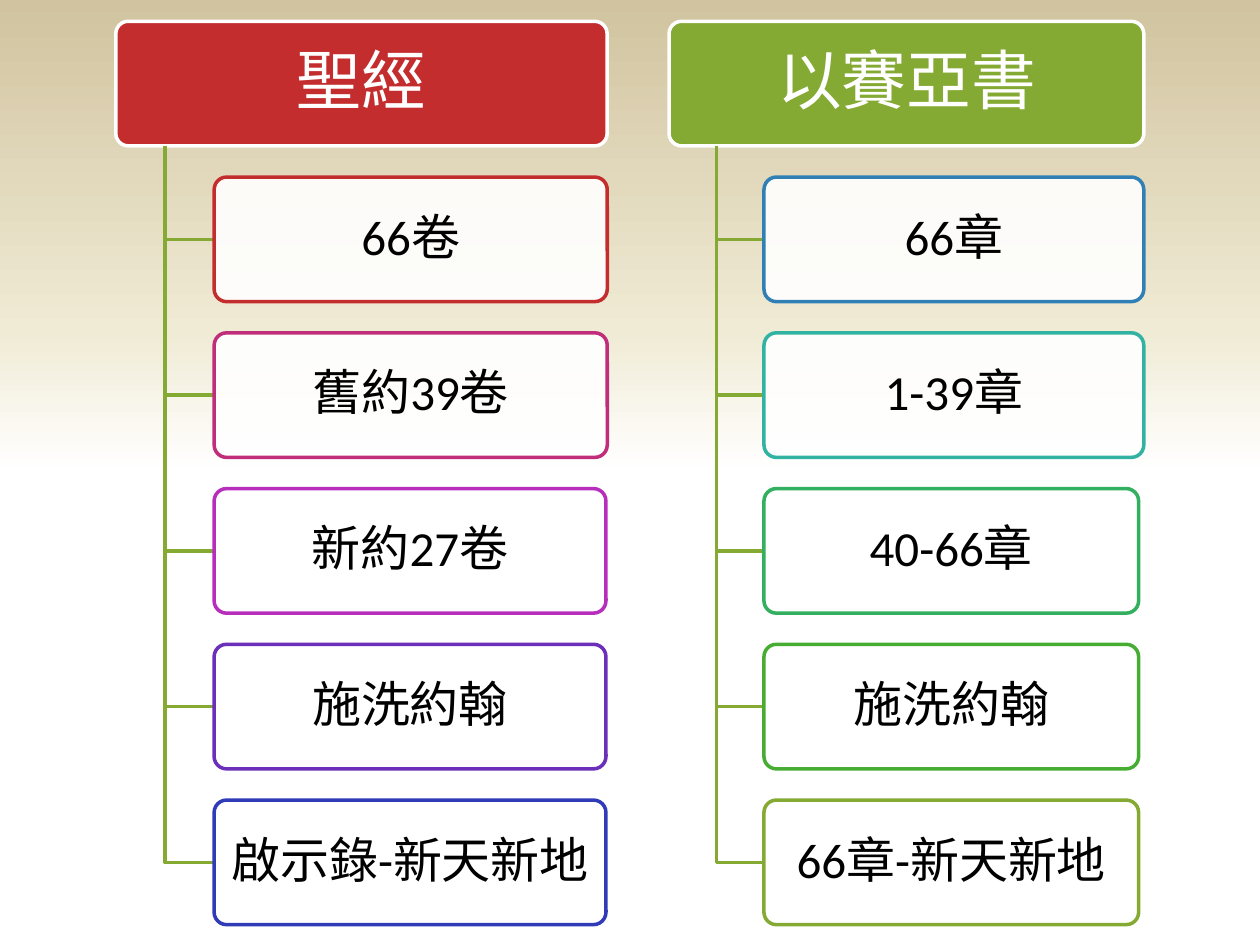
from lxml.etree import SubElement
from pptx import Presentation
from pptx.dml.color import RGBColor
from pptx.enum.shapes import MSO_SHAPE as Shape
from pptx.enum.text import MSO_ANCHOR as Anchor, PP_ALIGN as Align
from pptx.oxml.ns import qn
from pptx.util import Pt

WHITE = RGBColor(0xFF, 0xFF, 0xFF)
BLACK = RGBColor(0x00, 0x00, 0x00)
CREAM = RGBColor(0xF0, 0xEB, 0xD5)
TAN = RGBColor(0xD1, 0xC3, 0x9F)
RED = RGBColor(0xC3, 0x2D, 0x2E)
MAGENTA = RGBColor(0xC0, 0x2E, 0x7B)
PURPLE = RGBColor(0xB7, 0x2E, 0xBD)
VIOLET = RGBColor(0x6C, 0x2F, 0xBA)
INDIGO = RGBColor(0x30, 0x3B, 0xB8)
BLUE = RGBColor(0x31, 0x80, 0xB5)
TEAL = RGBColor(0x31, 0xB2, 0xA2)
EMERALD = RGBColor(0x32, 0xAF, 0x5F)
GREEN = RGBColor(0x46, 0xAD, 0x32)
OLIVE = RGBColor(0x84, 0xAA, 0x33)

TOP, ROW_PITCH, BOX_HEIGHT = 12.2, 89, 71.2
LINE_WIDTH = 2

# heading, colour, left, width, narrowing of the last three boxes, items
COLUMNS = [
    ("聖經", RED, 66.2, 280.8, 0.7, [
        ("66卷", RED), ("舊約39卷", MAGENTA), ("新約27卷", PURPLE),
        ("施洗約翰", VIOLET), ("啟示錄-新天新地", INDIGO)]),
    ("以賽亞書", OLIVE, 382.3, 271.3, 2.9, [
        ("66章", BLUE), ("1-39章", TEAL), ("40-66章", EMERALD),
        ("施洗約翰", GREEN), ("66章-新天新地", OLIVE)]),
]


def add_box(text, left, top, width, *, fill, line, color, size, inset, opacity=100):
    """Add a rounded box with centred text; inset is (horizontal, vertical)."""
    box = slide.shapes.add_shape(
        Shape.ROUNDED_RECTANGLE, Pt(left), Pt(top), Pt(width), Pt(BOX_HEIGHT))
    box.adjustments[0] = 0.1
    box.shadow.inherit = False
    box.fill.solid()
    box.fill.fore_color.rgb = fill
    if opacity < 100:
        fill_color = box.fill._xPr.find(qn("a:solidFill"))[0]
        SubElement(fill_color, qn("a:alpha"), val=str(opacity * 1000))
    box.line.color.rgb = line
    box.line.width = Pt(LINE_WIDTH)
    frame = box.text_frame
    frame.word_wrap = True
    frame.vertical_anchor = Anchor.MIDDLE
    frame.margin_left = frame.margin_right = Pt(inset[0])
    frame.margin_top = frame.margin_bottom = Pt(inset[1])
    para = frame.paragraphs[0]
    para.alignment = Align.CENTER
    para.line_spacing = 0.9
    span = para.add_run()
    span.text = text
    span.font.name = "Calibri"
    span.font.size = Pt(size)
    span.font.color.rgb = color


def add_branch(trunk, start, middle, end):
    """Draw an elbow down the trunk and across to a box."""
    builder = slide.shapes.build_freeform(Pt(trunk), Pt(start))
    builder.add_line_segments(
        [(Pt(trunk), Pt(middle)), (Pt(end), Pt(middle))], close=False)
    branch = builder.convert_to_shape()
    branch.shadow.inherit = False
    branch.fill.background()
    branch.line.color.rgb = OLIVE
    branch.line.width = Pt(LINE_WIDTH)


deck = Presentation()
deck.slide_width, deck.slide_height = Pt(720), Pt(540)
slide = deck.slides.add_slide(deck.slide_layouts[6])

backdrop = slide.background.fill
backdrop.gradient()
backdrop.gradient_angle = 90
stops = slide.element.find(".//" + qn("a:gsLst"))
for stop in list(stops):
    stops.remove(stop)
for position, color in [(50, WHITE), (65, CREAM), (100, TAN)]:
    stop = SubElement(stops, qn("a:gs"), pos=str(position * 1000))
    SubElement(stop, qn("a:srgbClr"), val=str(color))

for heading, accent, left, width, narrowing, items in COLUMNS:
    add_box(heading, left, TOP, width, fill=accent, line=WHITE,
            color=WHITE, size=37, inset=(5.8, 3.6))
    trunk = left + width * 0.1
    item_left = left + width * 0.2
    for row, (text, outline) in enumerate(items, start=1):
        top = TOP + row * ROW_PITCH
        item_width = width * 0.8 - (narrowing if row > 2 else 0)
        add_branch(trunk, TOP + BOX_HEIGHT, top + BOX_HEIGHT / 2, item_left)
        add_box(text, item_left, top, item_width, fill=WHITE, line=outline,
                color=BLACK, size=28, inset=(4.3, 2.9), opacity=90)

deck.save("out.pptx")
